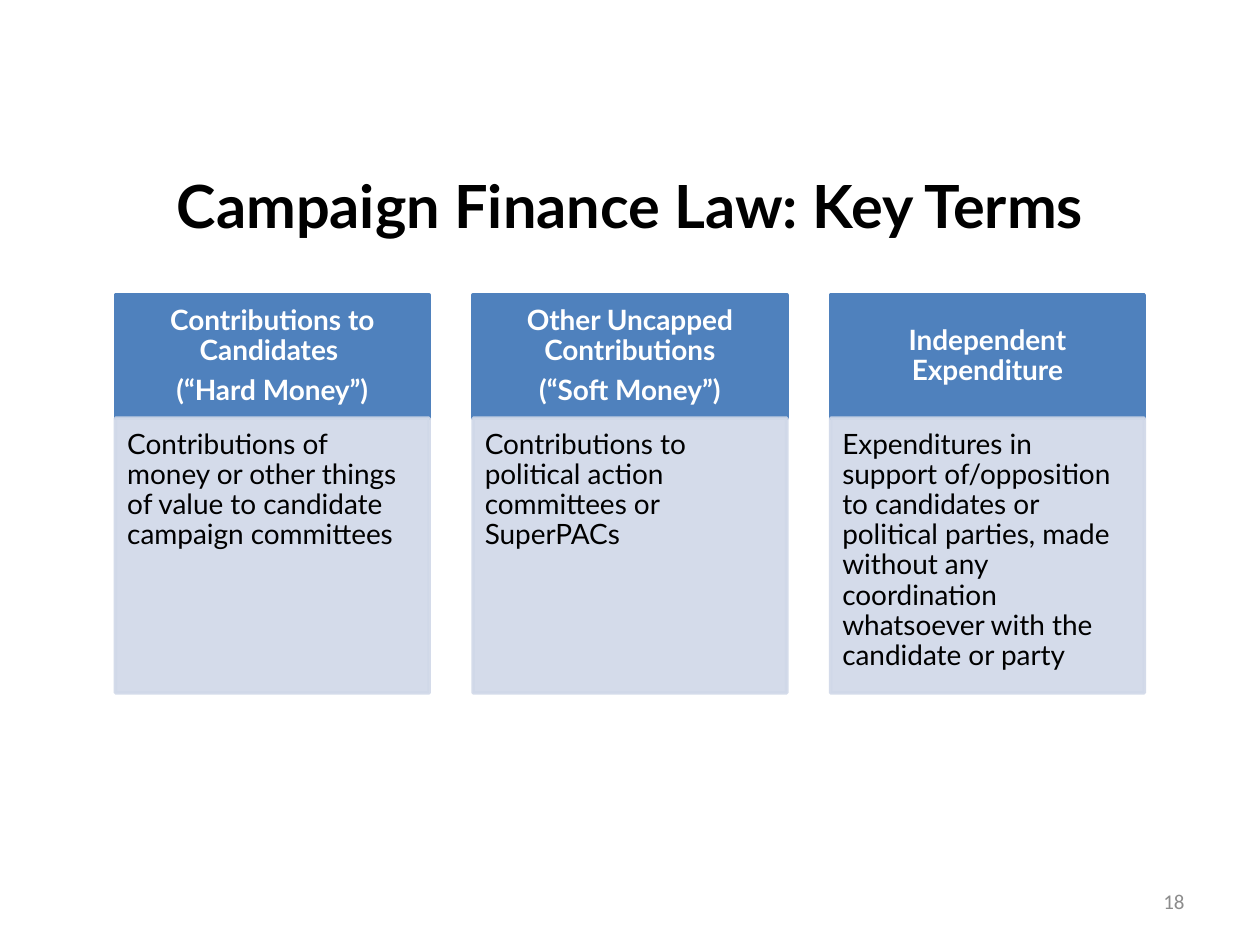
from pptx import Presentation
from pptx.dml.color import RGBColor
from pptx.enum.shapes import MSO_SHAPE
from pptx.enum.text import MSO_ANCHOR, PP_ALIGN
from pptx.oxml.ns import qn
from pptx.util import Pt
from lxml.etree import SubElement


def paint(hue):
    return RGBColor.from_string(hue)


def fade(part, alpha):
    for tint in part.iter(qn("a:srgbClr")):
        SubElement(tint, qn("a:alpha")).set("val", str(alpha * 1000))


class Deck:
    font = "Lato"
    blue = "4F81BD"
    pale = "D0D8E8"
    black = "000000"
    white = "FFFFFF"
    gray = "8C8C8C"

    def __init__(self, show):
        self.slide = show.slides.add_slide(show.slide_layouts[6])

    def words(self, shape, lines, size, hue, align, anchor, bold=False,
              font=None, pads=(7.2, 3.6, 7.2, 3.6), lead=None, after=0):
        frame = shape.text_frame
        frame.word_wrap = True
        frame.vertical_anchor = anchor
        (frame.margin_left, frame.margin_top,
         frame.margin_right, frame.margin_bottom) = map(Pt, pads)
        for num, line in enumerate(lines):
            para = frame.add_paragraph() if num else frame.paragraphs[0]
            para.alignment = align
            para.space_after = Pt(after)
            if lead:
                para.line_spacing = lead
            run = para.add_run()
            run.text = line
            run.font.size = Pt(size)
            run.font.name = font or self.font
            run.font.bold = bold
            run.font.color.rgb = paint(hue)

    def label(self, box, text, size, hue, align, **style):
        shape = self.slide.shapes.add_textbox(*map(Pt, box))
        self.words(shape, [text], size, hue, align, MSO_ANCHOR.MIDDLE, **style)

    def block(self, box, hue, alpha=None):
        shape = self.slide.shapes.add_shape(MSO_SHAPE.RECTANGLE, *map(Pt, box))
        shape.shadow.inherit = False
        shape.fill.solid()
        shape.fill.fore_color.rgb = paint(hue)
        shape.line.color.rgb = paint(hue)
        shape.line.width = Pt(2)
        if alpha:
            fade(shape.element.spPr, alpha)
        return shape

    def head(self, box, lines):
        self.words(self.block(box, self.blue), lines, 16, self.white,
                   PP_ALIGN.CENTER, MSO_ANCHOR.MIDDLE, bold=True,
                   pads=(8.96, 5.12, 8.96, 5.12), lead=0.9, after=5.6)

    def body(self, box, text):
        self.words(self.block(box, self.pale, 90), [text], 16, self.black,
                   PP_ALIGN.LEFT, MSO_ANCHOR.TOP,
                   pads=(6.72, 6.72, 8.96, 10.08), lead=0.9, after=2.4)


TERMS = [
    (["Contributions to Candidates ", "(“Hard Money”)"],
     "Contributions of money or other things of value to candidate "
     "campaign committees"),
    (["Other Uncapped Contributions", "(“Soft Money”)"],
     "Contributions to political action committees or SuperPACs"),
    (["Independent Expenditure"],
     "Expenditures in support of/opposition to candidates or political "
     "parties, made without any coordination whatsoever with the "
     "candidate or party"),
]


def main():
    show = Presentation()
    show.slide_width, show.slide_height = Pt(720), Pt(540)
    deck = Deck(show)
    deck.label((66, 90, 588, 54), "Campaign Finance Law: Key Terms", 34,
               deck.black, PP_ALIGN.CENTER, bold=True)
    left, top, wide, step = 66, 168.5, 179.3, 204.3
    high, deep = 70.5, 157
    for num, (name, text) in enumerate(TERMS):
        x = left + num * step
        deck.head((x, top, wide, high), name)
        deck.body((x, top + high, wide, deep), text)
    deck.label((516, 500.5, 168, 28.75), "18", 12, deck.gray,
               PP_ALIGN.RIGHT, font="Calibri")
    show.save("out.pptx")


if __name__ == "__main__":
    main()
